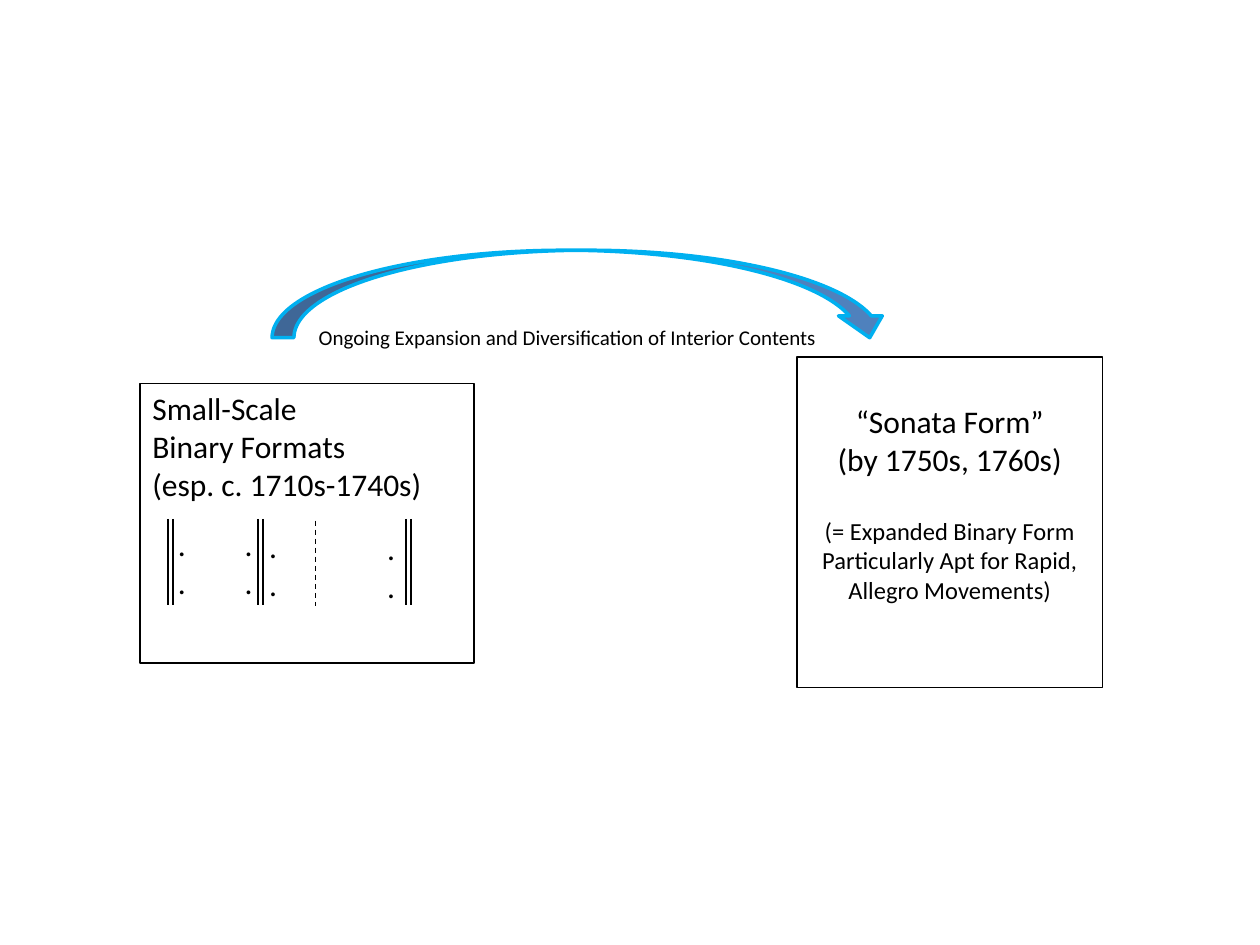
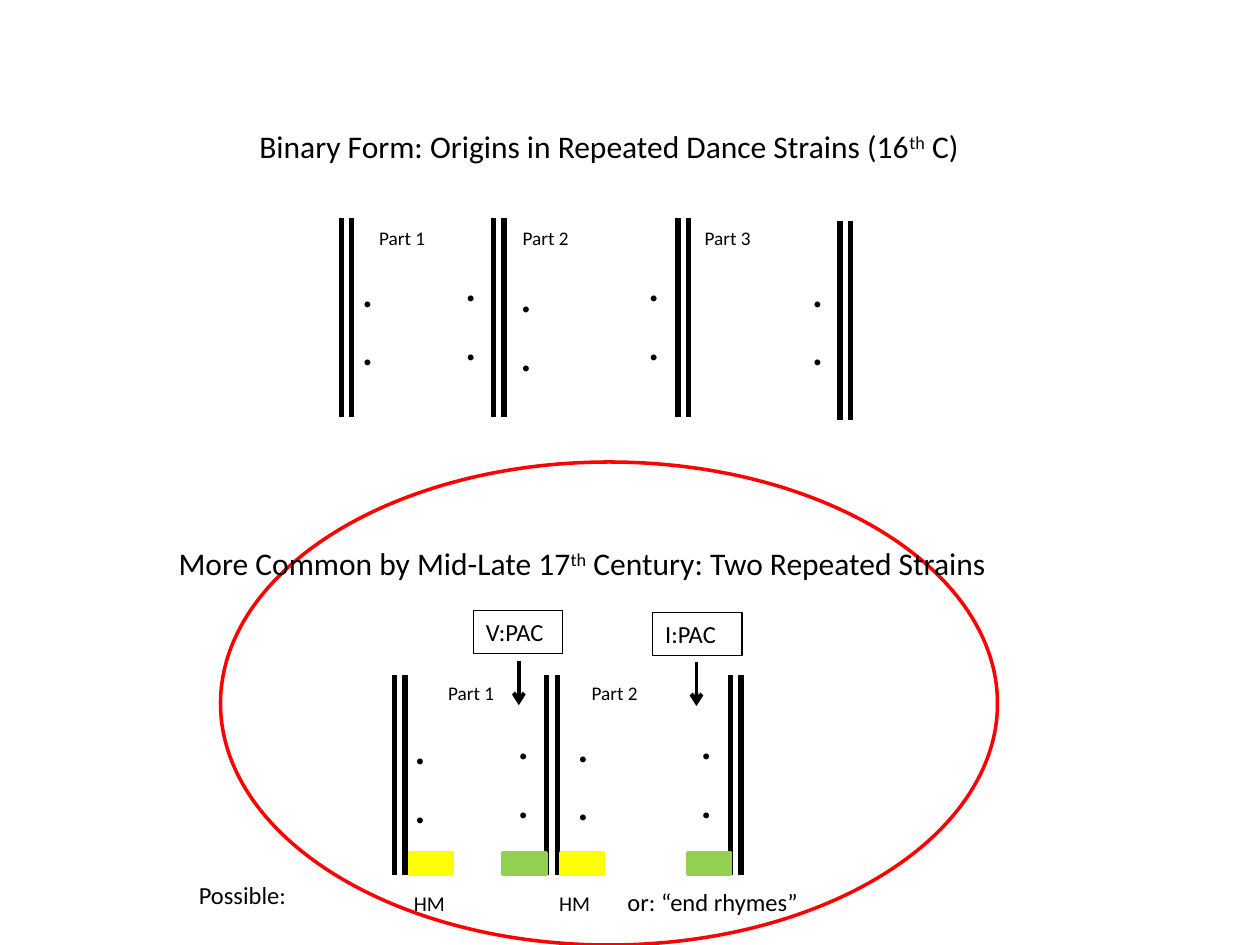
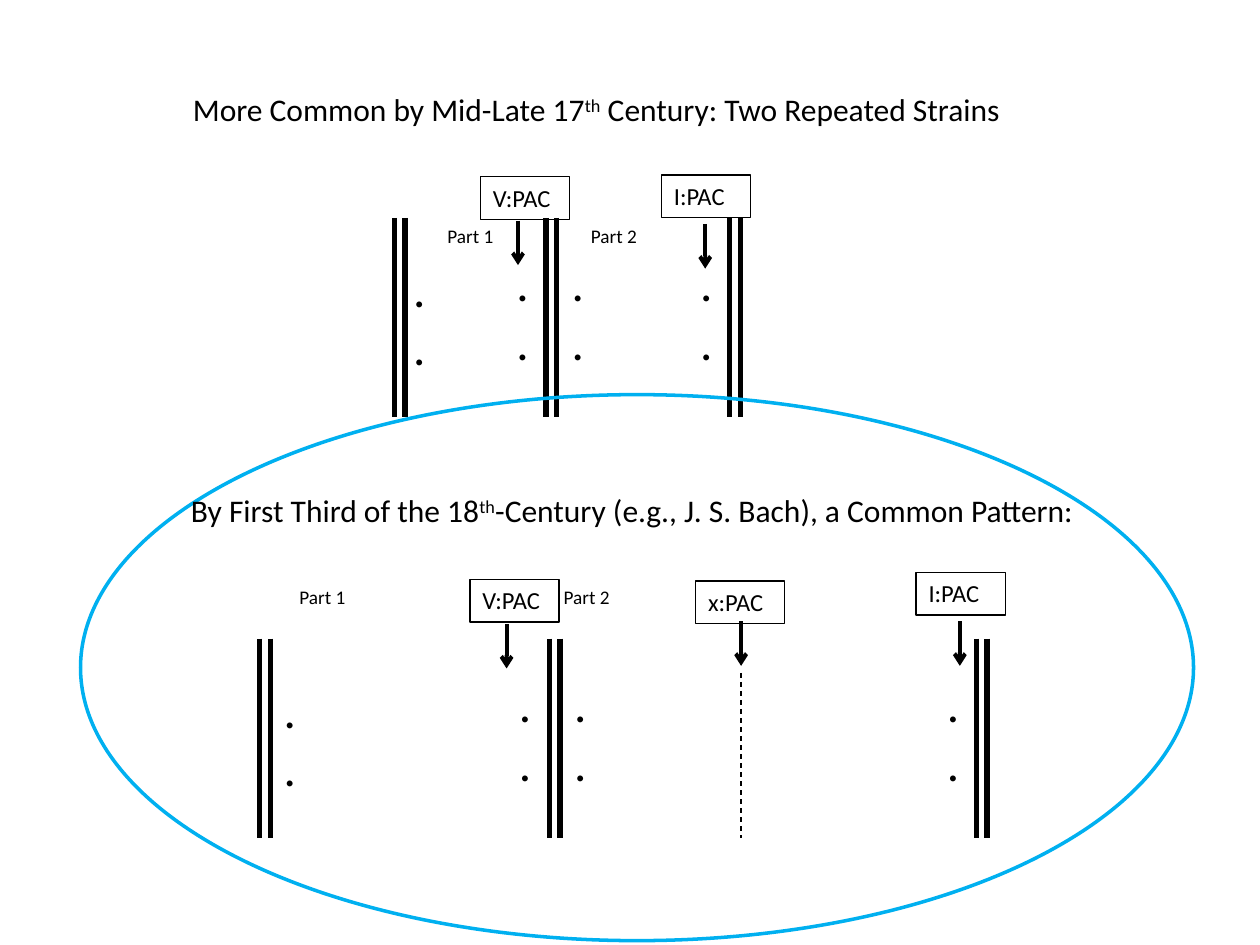
import pptx
import pptx.dml.color
import pptx.enum.dml
import pptx.enum.shapes
import pptx.enum.text
import pptx.util
from lxml import etree
from pptx.oxml.ns import qn

Pt = pptx.util.Pt
SHAPES = pptx.enum.shapes.MSO_SHAPE
ALIGN = pptx.enum.text.PP_ALIGN

# Theme
THEME = {
    "font": "Calibri",
    "ink": "000000", "blue": "4F81BD", "sky": "00B0F0",
    "red": "FF0000", "green": "92D050", "yellow": "FFFF00",
    "heading": 18, "body": 14, "note": 12, "part": 11,
    "hairline": 0.75, "outline": 2, "arrow": 2.25,
}
LABEL_SIZE = (51, 24.5)
ARROW_LENGTH = 25.5
TAG_SIZE = (24.5, 12)
EMPTY_LINE = 22

# Shared wording: a heading is (before, superscript, after)
TWO_STRAINS = ("More Common by Mid-Late 17", "th", " Century: Two Repeated Strains")

# Two sizes of barline drawing; dots are (left, top, width)
SMALL = {"gap": 3, "weight": 1, "length": 49.5, "dot_size": 18, "dot_height": 51, "inset": 3.7}
LARGE = {"gap": 6, "weight": 3, "length": 114, "dot_size": 28, "dot_height": 75, "inset": 7.2}

# Slide 1: from binary formats to sonata form
BINARY_FORMATS = ["Small-Scale", "Binary Formats", "(esp. c. 1710s-1740s)"]
SONATA_FORM = ["“Sonata Form”", "(by 1750s, 1760s)"]
SONATA_NOTE = "(= Expanded Binary Form Particularly Apt for Rapid, Allegro Movements)"
EXPANSION = "Ongoing Expansion and Diversification of Interior Contents"
FORMAT_BARS = {
    "style": SMALL,
    "bars": [(96, 296.5), (147.5, 296.5), (232, 296.5)],
    "dots": [(136, 296.5, 12), (98, 296.5, 12), (217.5, 299, 12), (150, 297.5, 12)],
}

# Slides 2 and 3: parts hold (box, names, tab stops);
# cadences hold (label, label left, label top, arrow x, arrow top)
THREE_STRAINS_16TH = {
    "style": LARGE,
    "bars": [(195, 124.5), (282, 124.5), (387.5, 124.5), (480, 126)],
    "dots": [(199.5, 144, 30), (258.5, 141, 30), (290, 147, 21), (363, 141, 30), (456.5, 144, 21)],
    "parts": ((209.5, 126, 264, 21), ["Part 1", "Part 2", "Part 3"], [82, 186]),
}
TWO_STRAINS_CIRCLED = {
    "style": LARGE,
    "bars": [(225.5, 386), (312.5, 386), (417.5, 386)],
    "dots": [(229.5, 405.5, 30), (288.5, 402.5, 30), (322.5, 404, 21), (393, 402.5, 30)],
    "parts": ((249, 386, 147, 34), ["Part 1", "Part 2"], [82]),
    "cadences": [("V:PAC", 270.5, 349, 296.5, 377.5), ("I:PAC", 373, 350, 398, 378)],
}
TWO_STRAINS_17TH = {
    "style": LARGE,
    "bars": [(225.5, 124.5), (312, 124.5), (417, 124.5)],
    "dots": [(229, 144, 30), (288, 141, 30), (319.5, 141, 21), (393, 141, 30)],
    "parts": ((248.5, 124.5, 147, 34), ["Part 1", "Part 2"], [82]),
    "cadences": [("V:PAC", 274.5, 101, 296, 126), ("I:PAC", 378, 100, 403, 128)],
}
PATTERN_18TH = {
    "style": LARGE,
    "bars": [(148.5, 365), (314, 365), (558, 365)],
    "dots": [(155, 384.5, 30), (289.5, 381.5, 30), (321, 381.5, 21), (534, 381.5, 30)],
    "parts": ((164, 331, 214, 34), ["Part 1", "Part 2"], [151]),
    "cadences": [("V:PAC", 268.5, 331, 289.5, 356.5), ("x:PAC", 397.5, 332, 423.5, 355),
                 ("I:PAC", 523.5, 327, 548.5, 355)],
}
STRAIN_SLIDES = [
    {
        "title": ((141, 69, 420, 29), ("Binary Form: Origins in Repeated Dance Strains (16", "th", " C)")),
        "subheading": ((95, 307.5, 512, 29), TWO_STRAINS),
        "systems": [THREE_STRAINS_16TH, TWO_STRAINS_CIRCLED],
        "circle": ((126, 264, 444, 276), "red"),
        "tags": [(287.5, "green"), (393, "green"), (234, "yellow"), (320.5, "yellow")],
        "notes": [("Possible:", "body", (106.5, 499.5, 70, 24.5)),
                  ("HM", "note", (229.5, 505.5, 42, 21.5)),
                  ("HM", "note", (312.5, 505.5, 42, 21.5)),
                  ("or: “end rhymes”", "body", (351.5, 503.5, 117, 24.5))],
    },
    {
        "title": ((103, 48, 512, 29), TWO_STRAINS),
        "subheading": ((102, 277, 541.5, 29),
                       ("By First Third of the 18", "th", "-Century (e.g., J. S. Bach), a Common Pattern:")),
        "systems": [TWO_STRAINS_17TH, PATTERN_18TH],
        "circle": ((46, 225.5, 636, 312), "sky"),
        "divider": (423.5, 384.5, 479),
    },
]
TAG_TOP = 487.5


# Helpers
def points(values):
    return [Pt(value) for value in values]


def apply(target, **values):
    for name, value in values.items():
        setattr(target, name, value)


def color(name):
    return pptx.dml.color.RGBColor.from_string(THEME[name])


def outline(target, name, weight):
    target.line.color.rgb = color(name)
    target.line.width = Pt(weight)


def style_run(run, size):
    apply(run.font, name=THEME["font"], size=Pt(size))
    run.font.color.rgb = color("ink")


def fill_text(holder, lines, size, align=ALIGN.LEFT, **frame_values):
    """Write lines; a tuple line has its middle part raised."""
    frame = holder.text_frame
    apply(frame, word_wrap=True, auto_size=pptx.enum.text.MSO_AUTO_SIZE.NONE,
          vertical_anchor=pptx.enum.text.MSO_ANCHOR.TOP, **frame_values)
    for index, line in enumerate(lines):
        paragraph = frame.paragraphs[0] if index == 0 else frame.add_paragraph()
        paragraph.alignment = align
        pieces = line if isinstance(line, tuple) else (line,)
        for position, piece in enumerate(pieces):
            run = paragraph.add_run()
            run.text = piece
            style_run(run, size)
            if position == 1:
                run._r.get_or_add_rPr().set("baseline", "30000")
    return frame


def add_text(slide, box, lines, size, boxed=False, **options):
    holder = slide.shapes.add_textbox(*points(box))
    if boxed:
        outline(holder, "ink", THEME["hairline"])
    return fill_text(holder, lines, size, **options)


def add_figure(slide, kind, box, line, fill=None):
    figure = slide.shapes.add_shape(kind, *points(box))
    figure.shadow.inherit = False
    outline(figure, line, THEME["outline"])
    if fill:
        figure.fill.solid()
        figure.fill.fore_color.rgb = color(fill)
    else:
        figure.fill.background()


def add_vertical(slide, x, top, length, weight, dashed=False, arrow=False):
    line = slide.shapes.add_connector(
        pptx.enum.shapes.MSO_CONNECTOR.STRAIGHT, *points((x, top, x, top + length)))
    outline(line, "ink", weight)
    if dashed:
        line.line.dash_style = pptx.enum.dml.MSO_LINE.DASH
    if arrow:
        etree.SubElement(line.line._get_or_add_ln(), qn("a:tailEnd"), type="arrow")
    etree.SubElement(line._element.spPr, qn("a:effectLst"))


def add_bars(slide, system):
    style = system["style"]
    for x, top in system["bars"]:
        for bar_x in (x, x + style["gap"]):
            add_vertical(slide, bar_x, top, style["length"], style["weight"])
    for left, top, width in system["dots"]:
        add_text(slide, (left, top, width, style["dot_height"]), [".", "."], style["dot_size"],
                 margin_left=Pt(style["inset"]), margin_right=0)


def add_parts(slide, box, names, stops):
    frame = add_text(slide, box, ["\t".join(names)], THEME["part"])
    tabs = etree.SubElement(frame.paragraphs[0]._p.get_or_add_pPr(), qn("a:tabLst"))
    for stop in stops:
        etree.SubElement(tabs, qn("a:tab"), pos=str(Pt(stop)), algn="l")


def add_system(slide, system):
    add_bars(slide, system)
    add_parts(slide, *system["parts"])
    for label, left, top, arrow_x, arrow_top in system.get("cadences", []):
        add_vertical(slide, arrow_x, arrow_top, ARROW_LENGTH, THEME["arrow"], arrow=True)
        add_text(slide, (left, top, *LABEL_SIZE), [label], THEME["body"], boxed=True)


# Slides
def build_overview(deck):
    slide = deck.slides.add_slide(deck.slide_layouts[6])
    add_text(slide, (80, 219, 191, 160), BINARY_FORMATS, THEME["heading"], boxed=True)
    add_bars(slide, FORMAT_BARS)
    add_figure(slide, SHAPES.CURVED_DOWN_ARROW, (155.5, 143, 354, 50), "sky", "blue")
    sonata = add_text(slide, (455.5, 204, 174.5, 189), SONATA_FORM + [SONATA_NOTE], THEME["heading"],
                      boxed=True, align=ALIGN.CENTER, margin_top=Pt(3.6 + EMPTY_LINE))
    note = sonata.paragraphs[-1]
    note.space_before = Pt(EMPTY_LINE)
    note.runs[0].font.size = Pt(THEME["body"])
    add_text(slide, (175, 182, 311, 22), [EXPANSION], THEME["note"])
    add_vertical(slide, 180.5, 297.5, 49, THEME["hairline"], dashed=True)


def build_strains(deck, content):
    slide = deck.slides.add_slide(deck.slide_layouts[5])
    box, heading = content["title"]
    title = slide.shapes.title
    apply(title, **dict(zip(("left", "top", "width", "height"), points(box))))
    fill_text(title, [heading], THEME["heading"])

    for system in content["systems"]:
        add_system(slide, system)
    if "divider" in content:
        x, top, bottom = content["divider"]
        add_vertical(slide, x, top, bottom - top, THEME["hairline"], dashed=True)
    circle_box, circle_color = content["circle"]
    add_figure(slide, SHAPES.OVAL, circle_box, circle_color)
    for left, tag_color in content.get("tags", []):
        add_figure(slide, SHAPES.RECTANGLE, (left, TAG_TOP, *TAG_SIZE), tag_color, tag_color)
    box, heading = content["subheading"]
    add_text(slide, box, [heading], THEME["heading"])
    for text, size, box in content.get("notes", []):
        add_text(slide, box, [text], THEME[size])


def main():
    deck = pptx.Presentation()
    apply(deck, slide_width=Pt(720), slide_height=Pt(540))
    build_overview(deck)
    for content in STRAIN_SLIDES:
        build_strains(deck, content)
    deck.save("out.pptx")


if __name__ == "__main__":
    main()
